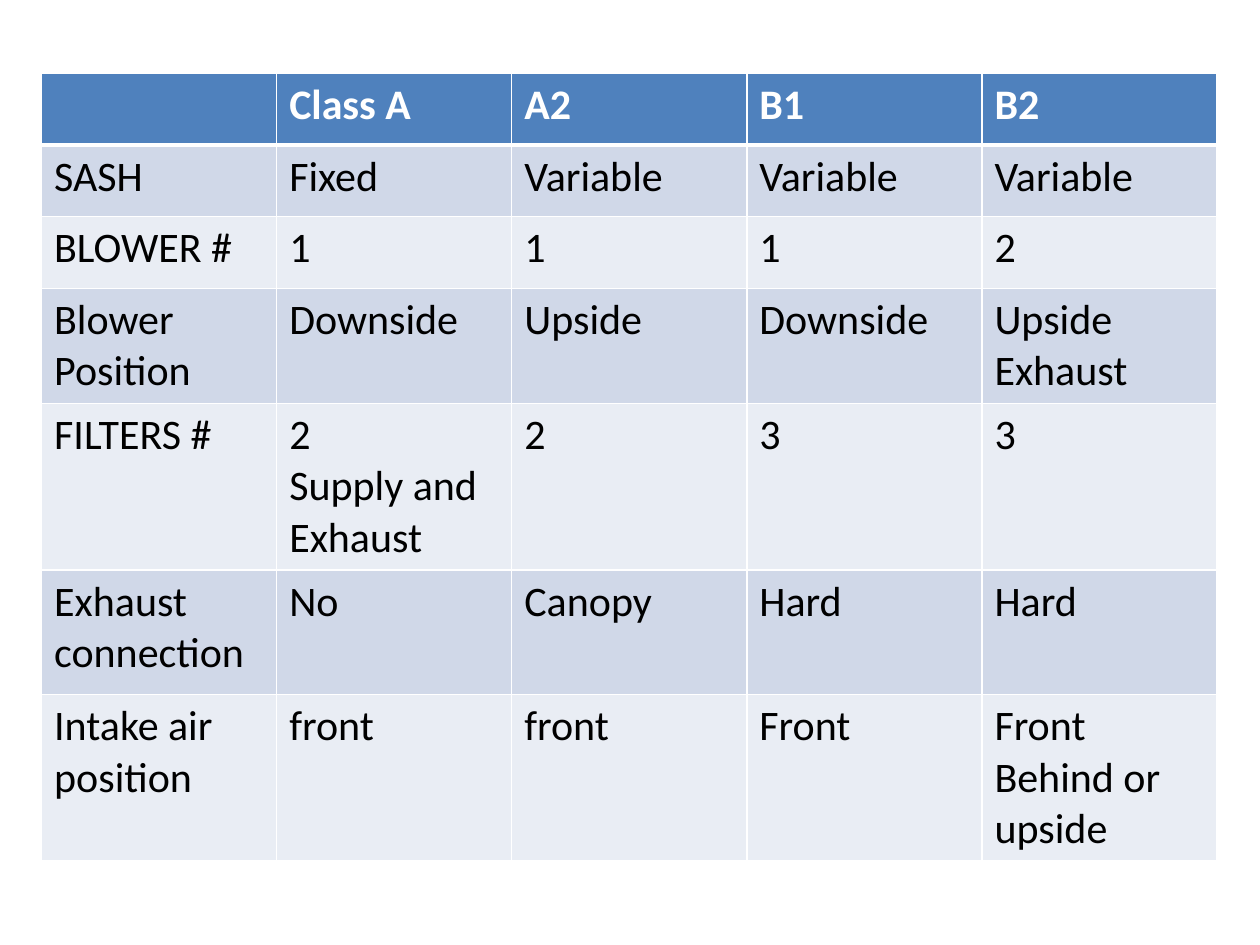
from lxml.etree import SubElement
from pptx import Presentation
from pptx.dml.color import RGBColor
from pptx.oxml.ns import qn
from pptx.util import Inches, Pt

# Content: one row per feature; a line break starts a new paragraph
CABINETS = [
    ("", "Class A", "A2", "B1", "B2"),
    ("SASH", "Fixed", "Variable", "Variable", "Variable"),
    ("BLOWER #", "1", "1", "1", "2"),
    ("Blower Position", "Downside", "Upside", "Downside", "Upside\nExhaust"),
    ("FILTERS #", "2\nSupply and Exhaust", "2", "3", "3"),
    ("Exhaust connection", "No", "Canopy", "Hard", "Hard"),
    ("Intake air position", "front", "front", "Front",
     "Front\nBehind or upside"),
]
ROW_HEIGHTS = [0.57, 0.57, 0.57, 0.91, 1.32, 0.99, 1.32]
LEFT, TOP, WIDTH = 0.33, 0.58, 9.33

HEADER_FILL = "4F81BD"
BAND_FILLS = ("E9EDF4", "D0D8E8")
WHITE, BLACK = "FFFFFF", "000000"


def color(hex_code):
    return RGBColor.from_string(hex_code)


def add_borders(cell, top, bottom):
    """White rules on all sides; top and bottom widths in points."""
    properties = cell._tc.get_or_add_tcPr()
    for side, width in (("L", 1), ("R", 1), ("T", top), ("B", bottom)):
        line = SubElement(properties, qn(f"a:ln{side}"), w=str(Pt(width)))
        fill = SubElement(line, qn("a:solidFill"))
        SubElement(fill, qn("a:srgbClr"), val=WHITE)


def fill_cell(cell, text, row):
    is_header = row == 0
    add_borders(cell, top=3 if row == 1 else 1, bottom=3 if is_header else 1)
    cell.fill.solid()
    cell.fill.fore_color.rgb = color(
        HEADER_FILL if is_header else BAND_FILLS[row % 2])
    cell.text = text
    for paragraph in cell.text_frame.paragraphs:
        font = paragraph.font
        font.name, font.size, font.bold = "Calibri", Pt(24), is_header
        font.color.rgb = color(WHITE if is_header else BLACK)


prs = Presentation()
prs.slide_width, prs.slide_height = Inches(10), Inches(7.5)
slide = prs.slides.add_slide(prs.slide_layouts[6])

# Comparison table with equal columns
column_count = len(CABINETS[0])
comparison = slide.shapes.add_table(
    len(CABINETS), column_count, Inches(LEFT), Inches(TOP),
    Inches(WIDTH), Inches(sum(ROW_HEIGHTS))).table
for column in comparison.columns:
    column.width = Inches(WIDTH / column_count)
for row, (height, texts) in enumerate(zip(ROW_HEIGHTS, CABINETS)):
    comparison.rows[row].height = Inches(height)
    for col, text in enumerate(texts):
        fill_cell(comparison.cell(row, col), text, row)

prs.save("out.pptx")
